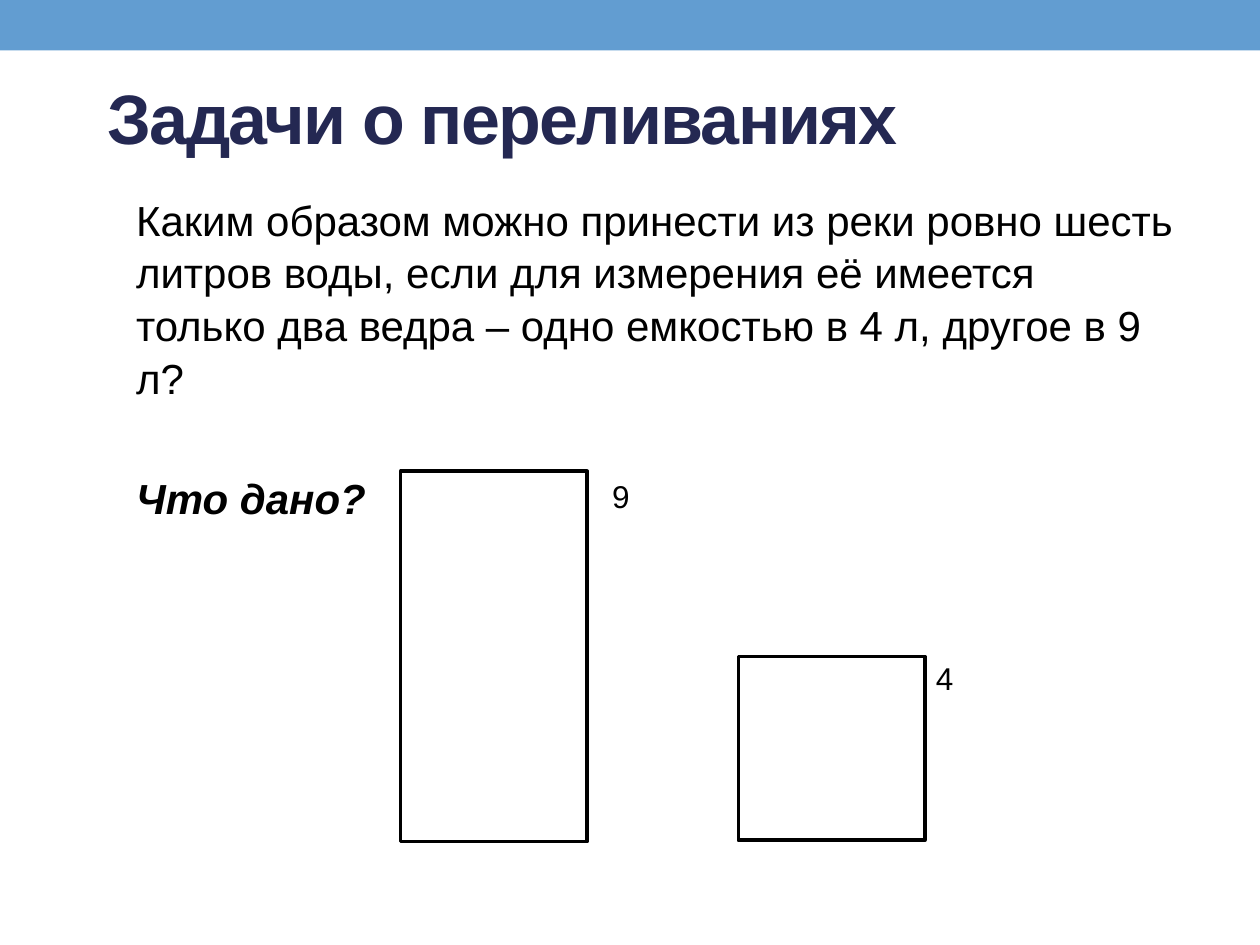
from lxml.etree import SubElement
from pptx import Presentation
from pptx.dml.color import RGBColor
from pptx.enum.shapes import MSO_SHAPE
from pptx.enum.text import MSO_ANCHOR, MSO_AUTO_SIZE, PP_ALIGN
from pptx.oxml.ns import qn
from pptx.util import Inches, Pt


def color(hex_string):
    return RGBColor.from_string(hex_string)


def add_run(paragraph, text, size, hex_string="000000"):
    run = paragraph.add_run()
    run.text = text
    run.font.name = "Arial"
    run.font.size = Pt(size)
    run.font.color.rgb = color(hex_string)
    return run


presentation = Presentation()
presentation.slide_width = Inches(10)
presentation.slide_height = Inches(7.5)
slide = presentation.slides.add_slide(presentation.slide_layouts[1])

# Top band, behind everything else
band = slide.shapes.add_shape(MSO_SHAPE.RECTANGLE, 0, 0, Inches(10), Inches(0.4))
band.shadow.inherit = False
band.fill.solid()
band.fill.fore_color.rgb = color("629DD1")
band.line.fill.background()
slide.shapes.title.element.addprevious(band.element)

# Title
title = slide.shapes.title
title.left, title.top = Inches(0.75), Inches(0.3)
title.width, title.height = Inches(8.75), Inches(1.25)
title.text_frame.auto_size = MSO_AUTO_SIZE.NONE
title.text_frame.vertical_anchor = MSO_ANCHOR.MIDDLE
paragraph = title.text_frame.paragraphs[0]
paragraph.alignment = PP_ALIGN.LEFT
run = add_run(paragraph, "Задачи о переливаниях", 40, "242852")
run.font.bold = True
run.font._element.set("spc", "-100")

# Problem statement and question
body = slide.placeholders[1]
body.left, body.top = Inches(0.98), Inches(1.47)
body.width, body.height = Inches(8.44), Inches(4.95)
body.text_frame.auto_size = MSO_AUTO_SIZE.NONE
problem = body.text_frame.paragraphs[0]
question = body.text_frame.add_paragraph()
for paragraph, space_before in ((problem, 0), (question, 38)):
    paragraph.line_spacing = 1.05
    paragraph.space_before = Pt(space_before)
    properties = paragraph._p.get_or_add_pPr()
    properties.set("marL", "0")
    properties.set("indent", "0")
    SubElement(properties, qn("a:buNone"))
add_run(
    problem,
    "Каким образом можно принести из реки ровно шесть литров воды, "
    "если для измерения её имеется только два ведра – "
    "одно емкостью в 4 л, другое в 9 л?",
    24,
)
run = add_run(question, "Что дано?", 24)
run.font.bold = True
run.font.italic = True

# Buckets: left, top, height, volume, label left, label top
buckets = [
    (3.18, 3.74, 2.94, "9", 4.76, 3.74),
    (5.86, 5.21, 1.46, "4", 7.33, 5.18),
]
for left, top, height, volume, label_left, label_top in buckets:
    bucket = slide.shapes.add_shape(
        MSO_SHAPE.RECTANGLE, Inches(left), Inches(top), Inches(1.48), Inches(height)
    )
    bucket.shadow.inherit = False
    bucket.fill.solid()
    bucket.fill.fore_color.rgb = color("FFFFFF")
    bucket.line.color.rgb = color("000000")
    bucket.line.width = Pt(2.08)

    label = slide.shapes.add_textbox(
        Inches(label_left), Inches(label_top), Inches(0.62), Inches(0.4)
    )
    label.text_frame.word_wrap = True
    label.text_frame.auto_size = MSO_AUTO_SIZE.SHAPE_TO_FIT_TEXT
    add_run(label.text_frame.paragraphs[0], volume, 18)

presentation.save("out.pptx")
